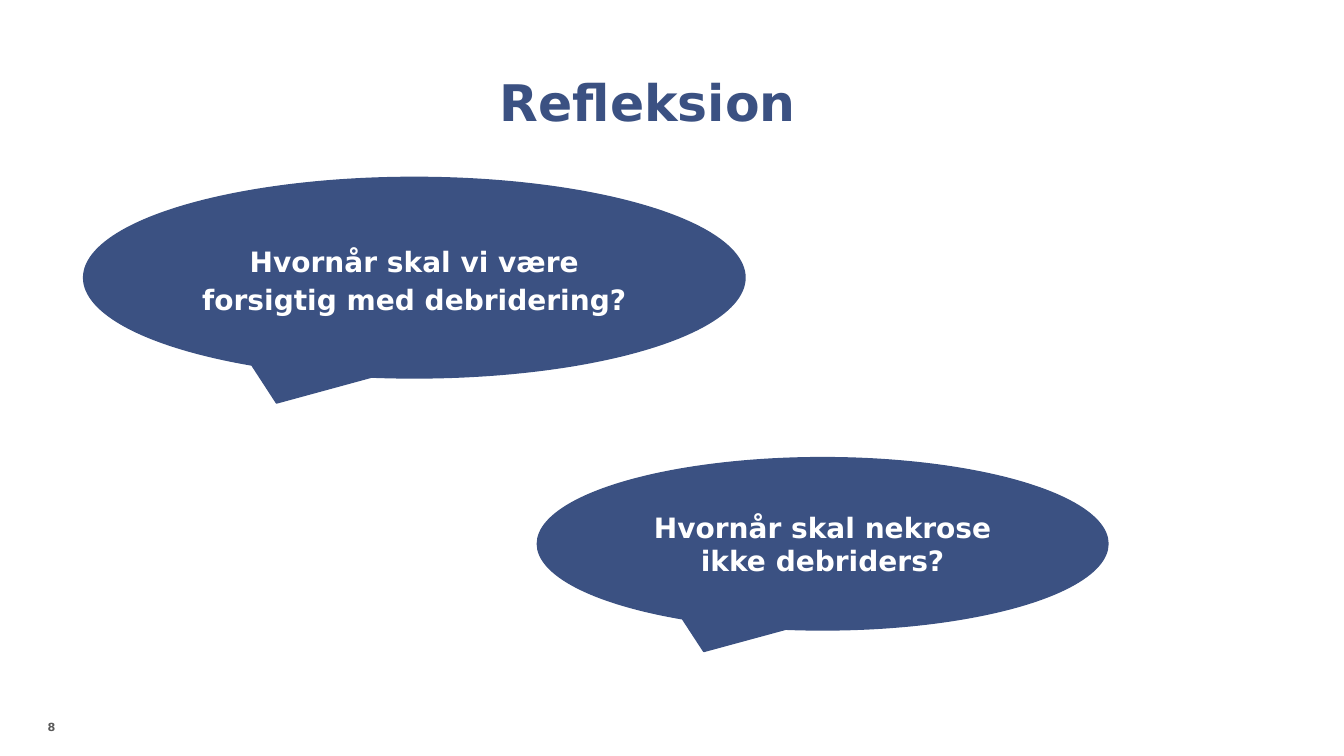
from dataclasses import dataclass

from pptx import Presentation
from pptx.dml.color import RGBColor
from pptx.enum.shapes import MSO_SHAPE
from pptx.enum.text import MSO_ANCHOR, PP_ALIGN
from pptx.util import Pt

PX = 9144
BUBBLE = MSO_SHAPE.OVAL_CALLOUT
BOTTOM, MIDDLE = MSO_ANCHOR.BOTTOM, MSO_ANCHOR.MIDDLE
CENTER, RIGHT = PP_ALIGN.CENTER, PP_ALIGN.RIGHT


@dataclass(frozen=True)
class Theme:
    face: str = "DejaVu Sans"
    navy: RGBColor = RGBColor(0x3B, 0x51, 0x82)
    white: RGBColor = RGBColor(0xFF, 0xFF, 0xFF)
    gray: RGBColor = RGBColor(0x59, 0x59, 0x59)
    head: int = 36
    body: int = 20
    small: int = 8


THEME = Theme()


def scale(box):
    return [n * PX for n in box]


def write(shape, text, size, color, align, line=1.0, after=0):
    shape.text_frame.word_wrap = True
    para = shape.text_frame.paragraphs[0]
    para.text = text
    para.alignment = align
    para.line_spacing = line
    para.space_before = Pt(0)
    para.space_after = Pt(after)
    font = para.font
    font.name = THEME.face
    font.size = Pt(size)
    font.bold = True
    font.color.rgb = color


def strip(frame):
    frame.margin_left = frame.margin_right = 0
    frame.margin_top = frame.margin_bottom = 0


def add_title(slide, box, text):
    title = slide.shapes.title
    title.left, title.top, title.width, title.height = scale(box)
    strip(title.text_frame)
    title.text_frame.vertical_anchor = BOTTOM
    write(title, text, THEME.head, THEME.navy, CENTER, 0.9)


def add_number(slide, box, text):
    number = slide.shapes.add_textbox(*scale(box))
    strip(number.text_frame)
    write(number, text, THEME.small, THEME.gray, RIGHT, after=6)


def add_bubble(slide, box, text, line=1.0, after=0):
    bubble = slide.shapes.add_shape(BUBBLE, *scale(box))
    bubble.shadow.inherit = False
    bubble.fill.solid()
    bubble.fill.fore_color.rgb = THEME.navy
    bubble.line.color.rgb = THEME.navy
    bubble.line.width = Pt(1)
    bubble.text_frame.vertical_anchor = MIDDLE
    write(bubble, text, THEME.body, THEME.white, CENTER, line, after)


def main():
    deck = Presentation()
    deck.slide_width, deck.slide_height = scale((1333, 750))
    slide = deck.slides.add_slide(deck.slide_layouts[5])
    add_number(slide, (16, 715, 39, 35), "8")
    add_title(slide, (115, 13, 1055, 118), "Refleksion")
    add_bubble(slide, (83, 176, 656, 199),
               "Hvornår skal vi være forsigtig med debridering?", 1.15, 8)
    add_bubble(slide, (533, 454, 566, 171),
               "Hvornår skal nekrose ikke debriders?")
    deck.save("out.pptx")


if __name__ == "__main__":
    main()
